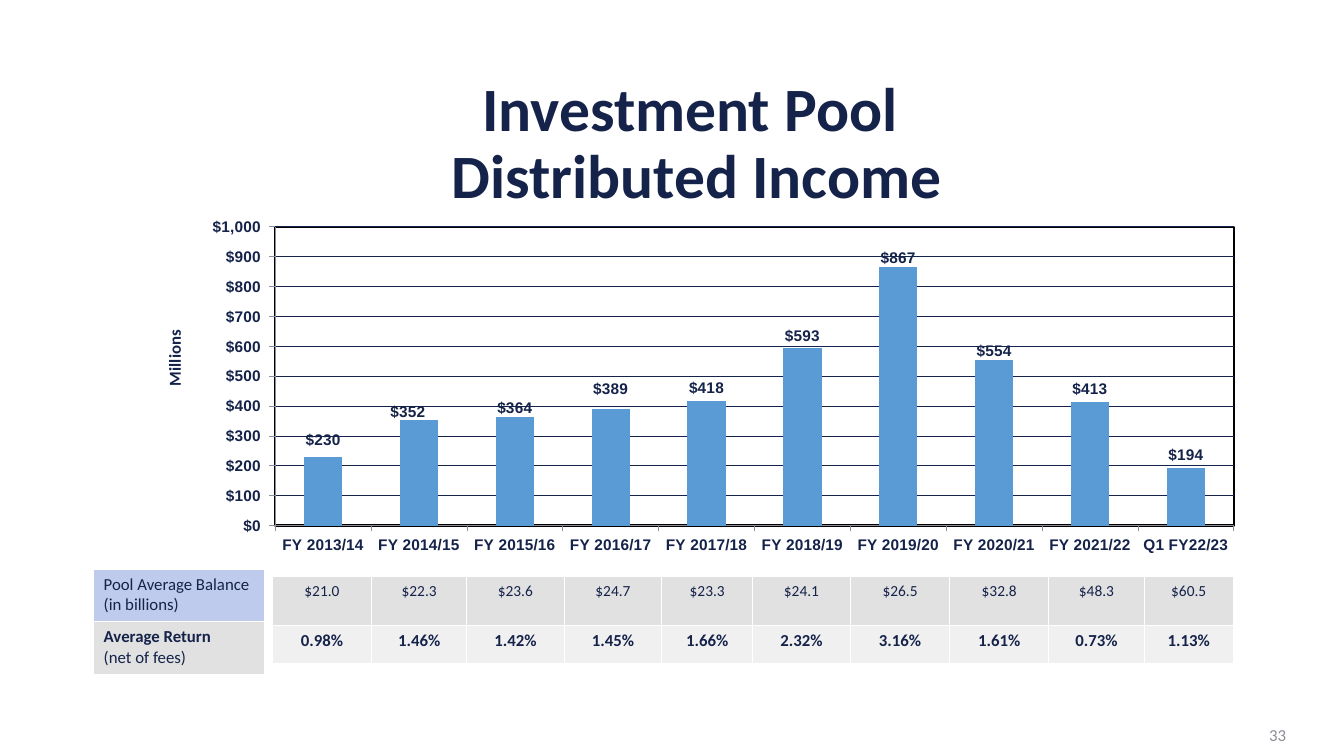
from lxml import etree
from pptx import Presentation, util as u
from pptx.chart.data import CategoryChartData
from pptx.dml.color import RGBColor
from pptx.enum import chart as charts, text
from pptx.oxml import parse_xml
from pptx.oxml.ns import nsdecls, qn

NAVY = RGBColor(0x15, 0x23, 0x4A)
GREY = RGBColor(0x8C, 0x8D, 0x96)
BLUE = RGBColor(0x5B, 0x9B, 0xD5)
LILAC = RGBColor(0xBE, 0xCB, 0xED)
SILVER = RGBColor(0xE1, 0xE1, 0xE1)
PALE = RGBColor(0xF0, 0xF0, 0xF0)

CENTER, RIGHT = text.PP_ALIGN.CENTER, text.PP_ALIGN.RIGHT
MONEY = '"$"#,##0'
YEARS = [f"FY {year}/{year % 100 + 1}" for year in range(2013, 2022)] + ["Q1 FY22/23"]
INCOME = [230, 352, 364, 389, 418, 593, 867, 554, 413, 194]
LABEL_SHIFTS = {0: (0, -0.01), 1: (-0.01, 0.01), 2: (0, 0.01), 3: (0, -0.02),
                4: (0, 0), 6: (0, 0.01), 7: (0, 0.01)}
BALANCES = ["$21.0", "$22.3", "$23.6", "$24.7", "$23.3",
            "$24.1", "$26.5", "$32.8", "$48.3", "$60.5"]
RETURNS = ["0.98%", "1.46%", "1.42%", "1.45%", "1.66%",
           "2.32%", "3.16%", "1.61%", "0.73%", "1.13%"]
COLUMN_WIDTHS = [2.51, 2.39, 2.46, 2.46, 2.29, 2.46, 2.51, 2.49, 2.41, 2.24]


def assign(target, **values):
    for name, value in values.items():
        setattr(target, name, value)


def manual_layout(**values):
    parts = "".join(f'<c:{name} val="{value}"/>' for name, value in values.items())
    return parse_xml(f'<c:layout {nsdecls("c")}><c:manualLayout>{parts}'
                     '</c:manualLayout></c:layout>')


def drop_layout(element):
    for layout in element.findall(qn("c:layout")):
        element.remove(layout)


class IncomePage:
    """Hold the text style and the current page, and add elements to it."""

    def __init__(self, page):
        self.page = page
        self.style = {"name": "Calibri", "size": u.Pt(12), "bold": False}
        self.bar_label = {"name": "Arial", "size": u.Pt(11), "bold": True}

    def format_font(self, font, color=NAVY, **changes):
        assign(font, **{**self.style, **changes})
        font.color.rgb = color

    def set_lines(self, frame, lines, align=None, color=NAVY, bolds=None, spacing=None, **font):
        for index, line in enumerate(lines):
            para = frame.add_paragraph() if index else frame.paragraphs[0]
            assign(para, text=line, alignment=align, line_spacing=spacing)
            bold = {"bold": bolds[index]} if bolds else {}
            for span in para.runs:
                self.format_font(span.font, color, **{**font, **bold})

    def text_box(self, place, lines, **style):
        box = self.page.shapes.add_textbox(*map(u.Cm, place))
        assign(box.text_frame, word_wrap=True, vertical_anchor=text.MSO_ANCHOR.MIDDLE)
        self.set_lines(box.text_frame, lines, **style)

    def table(self, left, top, widths, heights):
        table = self.page.shapes.add_table(len(heights), len(widths), u.Cm(left), u.Cm(top),
                                           u.Cm(sum(widths)), u.Cm(sum(heights))).table
        assign(table, first_row=False, horz_banding=False)
        for column, width in zip(table.columns, widths):
            column.width = u.Cm(width)
        for row, height in zip(table.rows, heights):
            row.height = u.Cm(height)
        return table

    def cell(self, cell, lines, fill, **style):
        cell.fill.solid()
        cell.fill.fore_color.rgb = fill
        props = cell._tc.get_or_add_tcPr()
        for index, side in enumerate("LRTB"):
            props.insert(index, parse_xml(
                f'<a:ln{side} {nsdecls("a")} w="12700"><a:solidFill>'
                f'<a:srgbClr val="FFFFFF"/></a:solidFill></a:ln{side}>'))
        self.set_lines(cell.text_frame, lines, **style)

    def axis(self, axis):
        axis.major_tick_mark = charts.XL_TICK_MARK.OUTSIDE
        self.format_font(axis.tick_labels.font, **self.bar_label)
        axis.format.line.color.rgb = GREY
        axis.format.line.width = u.Pt(0.5)

    def column_chart(self, place):
        data = CategoryChartData(number_format=MONEY)
        data.categories = YEARS
        data.add_series("Series 1", INCOME)
        chart = self.page.shapes.add_chart(
            charts.XL_CHART_TYPE.COLUMN_CLUSTERED, *map(u.Cm, place), data).chart
        assign(chart, has_legend=False, has_title=False)
        self.format_font(chart.font, size=u.Pt(18))
        assign(chart.plots[0], gap_width=150, vary_by_categories=False)

        self.axis(chart.category_axis)
        values = chart.value_axis
        self.axis(values)
        assign(values, minimum_scale=0, maximum_scale=1000, major_unit=100,
               has_major_gridlines=True)
        values.major_gridlines.format.line.color.rgb = NAVY
        values.major_gridlines.format.line.width = u.Pt(0.5)
        assign(values.tick_labels, number_format=r'"$"#,##0_);[Red]\("$"#,##0\)',
               number_format_is_linked=False)
        self.set_lines(values.axis_title.text_frame, ["Millions"], bold=True)
        title = values.axis_title._element
        drop_layout(title)
        title.find(qn("c:tx")).addnext(
            manual_layout(xMode="edge", yMode="edge", x=0.01, y=0.38))

        area = chart._chartSpace.chart.plotArea
        drop_layout(area)
        area.insert(0, manual_layout(layoutTarget="inner", xMode="edge", yMode="edge",
                                     x=0.115, y=0.115, w=0.875, h=0.79))
        area.append(parse_xml(
            f'<c:spPr {nsdecls("c", "a")}><a:noFill/><a:ln w="19050"><a:solidFill>'
            '<a:srgbClr val="000000"/></a:solidFill></a:ln></c:spPr>'))
        self.bars(chart.plots[0].series[0])

    def bars(self, series):
        series.format.fill.solid()
        series.format.fill.fore_color.rgb = BLUE
        labels = series.data_labels
        outside = charts.XL_LABEL_POSITION.OUTSIDE_END
        assign(labels, show_value=True, number_format=MONEY,
               number_format_is_linked=False, position=outside)
        self.format_font(labels.font, **self.bar_label)
        for index in LABEL_SHIFTS:
            label = series.points[index].data_label
            label.position = outside
            self.format_font(label.font, **self.bar_label)
        for node, (x, y) in zip(labels._element.findall(qn("c:dLbl")), LABEL_SHIFTS.values()):
            layout = manual_layout(x=x, y=y)
            node.find(qn("c:idx")).addnext(layout)
            layout.addnext(etree.Element(qn("c:numFmt"), formatCode=MONEY, sourceLinked="0"))


def main():
    deck = Presentation()
    assign(deck, slide_width=u.Cm(33.87), slide_height=u.Cm(19.05))
    page = IncomePage(deck.slides.add_slide(deck.slide_layouts[6]))

    page.text_box((6.35, 2.06, 22.43, 3.18), ["Investment Pool \vDistributed Income"],
                  align=CENTER, spacing=0.9, size=u.Pt(44), bold=True)
    page.column_chart((3.76, 4.62, 27.61, 9.53))

    heads = page.table(2.36, 14.35, [4.32], [1.32, 1.32])
    page.cell(heads.cell(0, 0), ["Pool Average Balance", "(in billions)"], LILAC)
    page.cell(heads.cell(1, 0), ["Average Return", "(net of fees)"], SILVER,
              bolds=[True, False])

    figures = page.table(6.86, 14.53, COLUMN_WIDTHS, [1.23, 0.95])
    for column, (balance, rate) in enumerate(zip(BALANCES, RETURNS)):
        page.cell(figures.cell(0, column), [balance], SILVER, align=CENTER, size=u.Pt(11))
        page.cell(figures.cell(1, column), [rate], PALE, align=CENTER, bold=True)

    page.text_box((25.04, 18.01, 7.62, 1.02), ["33"], align=RIGHT, color=GREY)
    deck.save("out.pptx")


if __name__ == "__main__":
    main()
